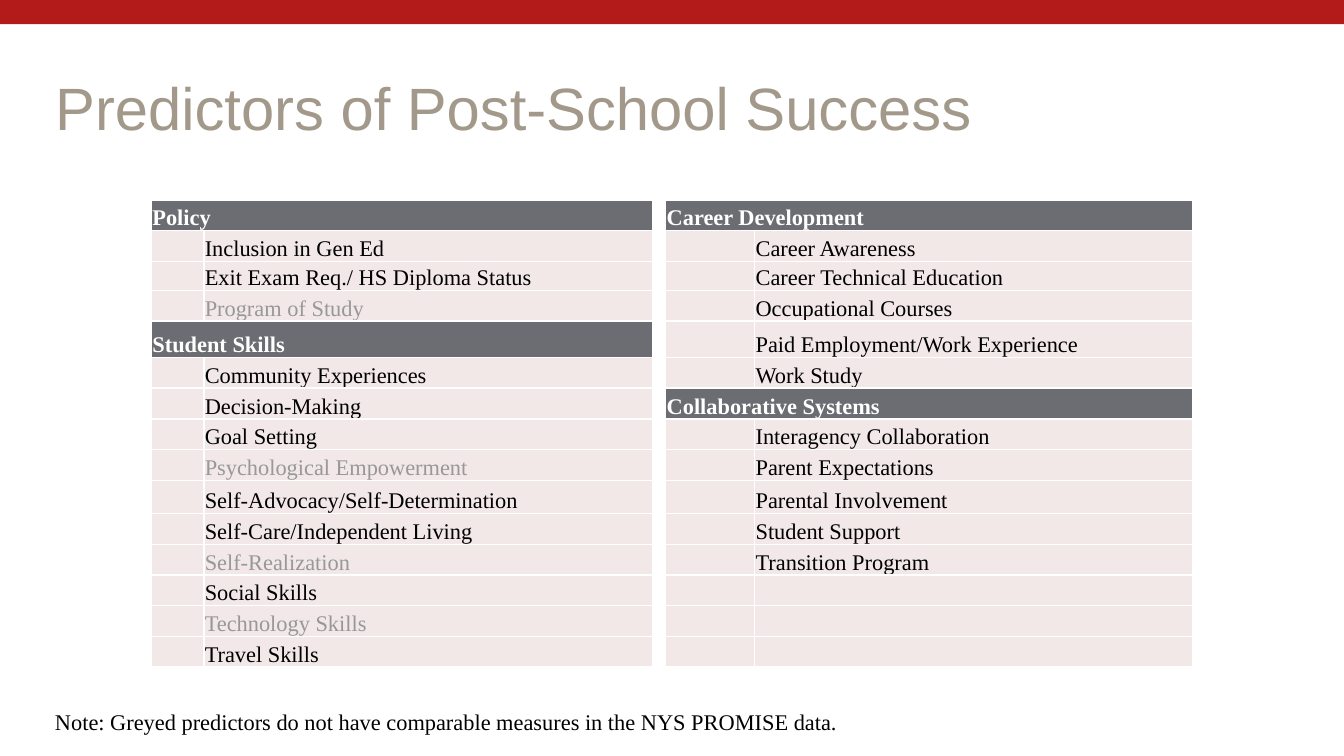
from lxml.etree import SubElement
from pptx import Presentation
from pptx.dml.color import RGBColor
from pptx.enum.shapes import MSO_SHAPE as Shape
from pptx.enum.text import MSO_ANCHOR as Anchor, MSO_AUTO_SIZE as AutoSize, PP_ALIGN as Align
from pptx.oxml.ns import qn
from pptx.util import Cm, Pt

RED = RGBColor(0xB3, 0x1B, 0x1B)
TAUPE = RGBColor(0xA2, 0x99, 0x8B)
SLATE = RGBColor(0x6C, 0x6C, 0x73)
BLUSH = RGBColor(0xF2, 0xE8, 0xE8)
GREY = RGBColor(0x98, 0x98, 0x98)
BLACK = RGBColor(0, 0, 0)
WHITE = RGBColor(0xFF, 0xFF, 0xFF)

SERIF = "Times New Roman"
BODY_SIZE = Pt(12)

LEFT_GROUPS = {
    "Policy": ["Inclusion in Gen Ed", "Exit Exam Req./ HS Diploma Status", "Program of Study"],
    "Student Skills": [
        "Community Experiences", "Decision-Making", "Goal Setting",
        "Psychological Empowerment", "Self-Advocacy/Self-Determination",
        "Self-Care/Independent Living", "Self-Realization", "Social Skills",
        "Technology Skills", "Travel Skills"],
}
RIGHT_GROUPS = {
    "Career Development": [
        "Career Awareness", "Career Technical Education", "Occupational Courses",
        "Paid Employment/Work Experience", "Work Study"],
    "Collaborative Systems": [
        "Interagency Collaboration", "Parent Expectations", "Parental Involvement",
        "Student Support", "Transition Program"],
}
UNMEASURED = {"Program of Study", "Psychological Empowerment", "Self-Realization",
              "Technology Skills"}

COLUMN_WIDTHS = [0.99, 8.48, 0.25, 1.68, 8.28]
GAP_COLUMN = 2
ROW_COUNT = 15
ROW_HEIGHT = 0.58
SPECIAL_HEIGHTS = {2: 0.55, 4: 0.69, 9: 0.63}


def style_text(paragraph, size, color, font_name, bold=False):
    font = paragraph.font
    font.size, font.name, font.bold = size, font_name, bold
    font.color.rgb = color


def add_top_bar(slide, width):
    bar = slide.shapes.add_shape(Shape.RECTANGLE, 0, 0, width, Cm(0.46))
    bar.shadow.inherit = False
    bar.fill.solid()
    bar.fill.fore_color.rgb = RED
    bar.line.fill.background()


def set_title(slide, wording):
    title = slide.shapes.title
    title.left, title.top, title.width, title.height = Cm(0.79), Cm(1.3), Cm(24.1), Cm(1.42)
    frame = title.text_frame
    frame.text = wording
    frame.vertical_anchor = Anchor.MIDDLE
    frame.auto_size = AutoSize.NONE
    heading = frame.paragraphs[0]
    heading.alignment = Align.LEFT
    style_text(heading, Pt(32), TAUPE, "Arial")


def add_note(slide, wording):
    note = slide.shapes.add_textbox(Cm(0.79), Cm(13.26), Cm(20.96), Cm(0.76))
    frame = note.text_frame
    frame.word_wrap = True
    frame.text = wording
    style_text(frame.paragraphs[0], BODY_SIZE, BLACK, SERIF)


def style_cell(cell, fill_color):
    """Give a cell white 1 pt borders, thin margins, a fill and a small empty line."""
    cell.margin_left = cell.margin_right = cell.margin_top = Cm(0.02)
    cell.margin_bottom = 0
    cell.vertical_anchor = Anchor.BOTTOM
    properties = cell._tc.get_or_add_tcPr()
    for side in ("lnL", "lnR", "lnT", "lnB"):
        border = SubElement(properties, qn(f"a:{side}"), w=str(Pt(1)))
        border_fill = SubElement(border, qn("a:solidFill"))
        SubElement(border_fill, qn("a:srgbClr"), val=str(WHITE))
    cell.fill.solid()
    cell.fill.fore_color.rgb = fill_color
    paragraph = cell.text_frame.paragraphs[0]
    SubElement(paragraph._p, qn("a:endParaRPr"), sz="1200")


def write_cell(cell, wording, color, bold=False):
    paragraph = cell.text_frame.paragraphs[0]
    paragraph.add_run().text = wording
    style_text(paragraph, BODY_SIZE, color, SERIF, bold)


def fill_groups(table, groups, first_column):
    """Write headings across two columns and their predictors in the second one."""
    row = 0
    for heading, predictors in groups.items():
        header, covered = (table.cell(row, first_column + i) for i in range(2))
        header.merge(covered)
        for cell in (header, covered):
            cell.fill.fore_color.rgb = SLATE
        write_cell(header, heading, WHITE, bold=True)
        for row, predictor in enumerate(predictors, start=row + 1):
            color = GREY if predictor in UNMEASURED else BLACK
            write_cell(table.cell(row, first_column + 1), predictor, color)
        row += 1


def add_predictor_table(slide):
    heights = [SPECIAL_HEIGHTS.get(row, ROW_HEIGHT) for row in range(ROW_COUNT)]
    table = slide.shapes.add_table(
        ROW_COUNT, len(COLUMN_WIDTHS), Cm(2.86), Cm(3.78),
        Cm(sum(COLUMN_WIDTHS)), Cm(sum(heights))).table
    table.first_row = table.horz_banding = False
    for column, width in zip(table.columns, COLUMN_WIDTHS):
        column.width = Cm(width)
    for row, height in zip(table.rows, heights):
        row.height = Cm(height)
        for index, cell in enumerate(row.cells):
            style_cell(cell, WHITE if index == GAP_COLUMN else BLUSH)
    fill_groups(table, LEFT_GROUPS, 0)
    fill_groups(table, RIGHT_GROUPS, GAP_COLUMN + 1)


def main():
    deck = Presentation()
    deck.slide_width, deck.slide_height = Cm(25.4), Cm(14.29)
    slide = deck.slides.add_slide(deck.slide_layouts[5])
    add_top_bar(slide, deck.slide_width)
    set_title(slide, "Predictors of Post-School Success")
    add_predictor_table(slide)
    add_note(slide, "Note: Greyed predictors do not have comparable measures "
                    "in the NYS PROMISE data.")
    deck.save("out.pptx")


if __name__ == "__main__":
    main()
